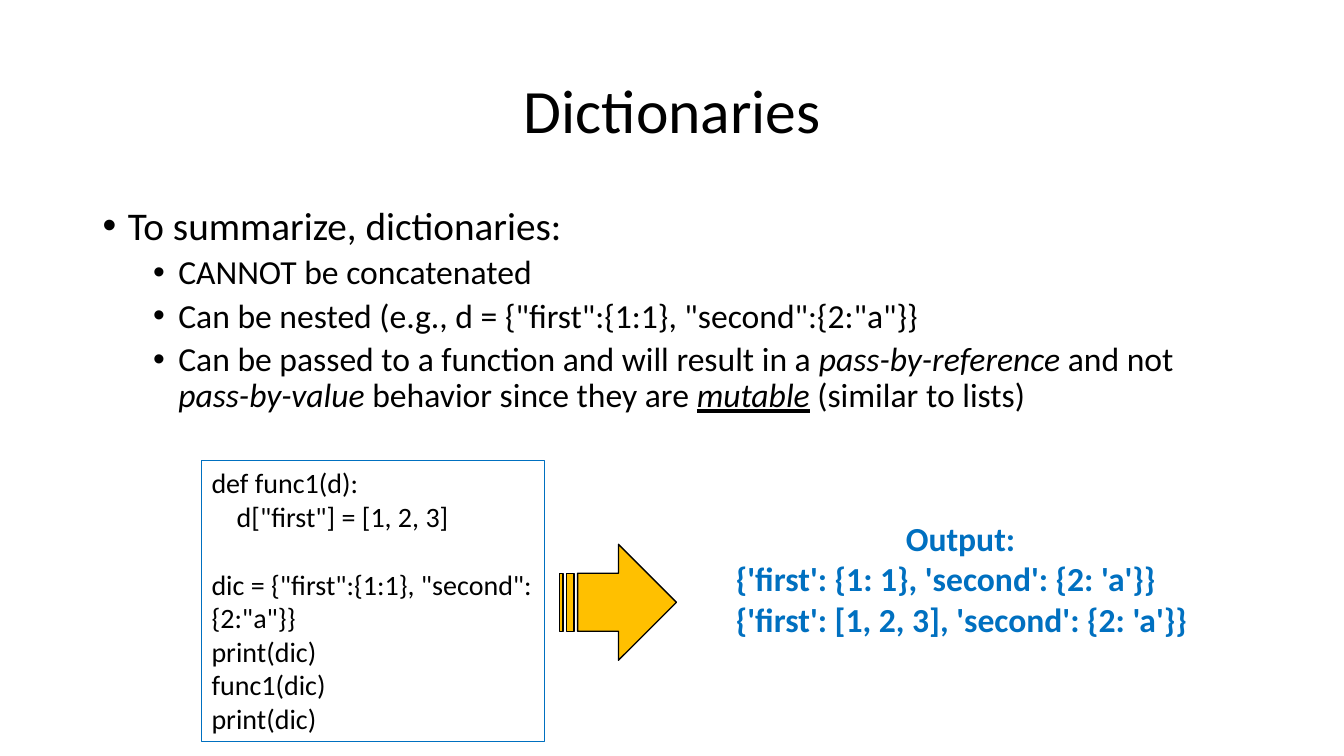
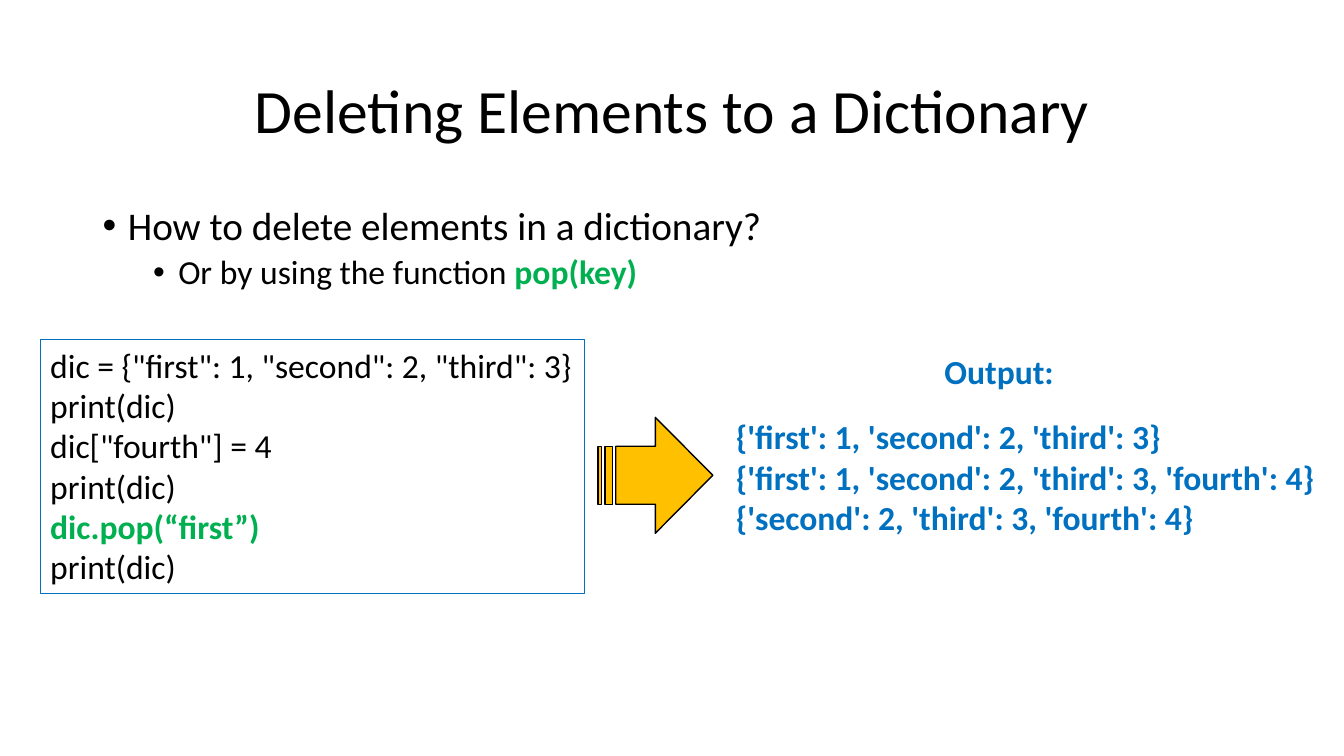
from lxml import etree
from pptx import Presentation
from pptx.dml.color import RGBColor
from pptx.enum.shapes import MSO_SHAPE
from pptx.enum.text import MSO_ANCHOR, MSO_AUTO_SIZE, PP_ALIGN
from pptx.oxml.ns import qn
from pptx.util import Inches, Pt

RECT, ARROW = MSO_SHAPE.RECTANGLE, MSO_SHAPE.STRIPED_RIGHT_ARROW
LEFT, CENTER = PP_ALIGN.LEFT, PP_ALIGN.CENTER
TOP, MIDDLE = MSO_ANCHOR.TOP, MSO_ANCHOR.MIDDLE
GROW = MSO_AUTO_SIZE.SHAPE_TO_FIT_TEXT

FONT = "Calibri"
BLACK = RGBColor(0x00, 0x00, 0x00)
BLUE = RGBColor(0x00, 0x70, 0xC0)
GREEN = RGBColor(0x00, 0xB0, 0x50)
GOLD = RGBColor(0xFF, 0xC0, 0x00)

TITLE_BOX = (0.92, 0.4, 11.5, 1.45)
BODY_BOX = (0.92, 2, 11.5, 4.76)
# Bullet levels: left margin in inches, text size, space before
LEVELS = [(0.25, 28, 10), (0.75, 24, 5)]

# A line is a string, or a list of (text, marks) runs:
# i italic, u underlined, k green bold keyword
SLIDES = [
    {
        "title": "Dictionaries",
        "bullets": [
            (0, "To summarize, dictionaries:"),
            (1, "CANNOT be concatenated"),
            (1, 'Can be nested (e.g., d = {"first":{1:1}, "second":{2:"a"}}'),
            (1, [("Can be passed to a function and will result in a ", ""),
                 ("pass-by-reference", "i"), (" and not ", ""),
                 ("pass-by-value", "i"), (" behavior since they are ", ""),
                 ("mutable", "iu"), (" (similar to lists)", "")]),
        ],
        "code": ["def func1(d):", 'd["first"] = [1, 2, 3]',
                 'dic = {"first":{1:1}, "second":{2:"a"}}',
                 "print(dic)", "func1(dic)", "print(dic)"],
        "code_box": (2, 4.57, 3.4, 2.79),
        "code_size": 20,
        "indented": 1,
        "gap_before": 2,
        "arrow": (5.55, 5.4, 1.16, 1.15),
        "output": [((7.2, 5.09, 4.73, 1.31),
                    ["Output: ", "{'first': {1: 1}, 'second': {2: 'a'}}",
                     "{'first': [1, 2, 3], 'second': {2: 'a'}}"])],
    },
    {
        "title": "Deleting Elements to a Dictionary",
        "bullets": [
            (0, "How to delete elements in a dictionary?"),
            (1, [("Or by using the function ", ""), ("pop(key)", "k")]),
        ],
        "code": ['dic = {"first": 1, "second": 2, "third": 3}', "print(dic)",
                 'dic["fourth"] = 4', "print(dic)",
                 [("dic.pop(“first”)", "k")], "print(dic)"],
        "code_box": (0.4, 3.37, 5.4, 2.52),
        "code_size": 24,
        "arrow": (5.93, 4.14, 1.14, 1.15),
        "output": [((9.26, 3.43, 1.3, 0.5), ["Output:"]),
                   ((7.2, 4.08, 6, 1.31),
                    ["{'first': 1, 'second': 2, 'third': 3}",
                     "{'first': 1, 'second': 2, 'third': 3, 'fourth': 4}",
                     "{'second': 2, 'third': 3, 'fourth': 4}"])],
    },
]


def place(box):
    return [Inches(n) for n in box]


def write(frame, lines, size, color=BLACK, bold=False):
    """Fill a text frame with one left-aligned paragraph per line."""
    for num, line in enumerate(lines):
        para = frame.add_paragraph() if num else frame.paragraphs[0]
        para.alignment = LEFT
        for text, marks in [(line, "")] if isinstance(line, str) else line:
            run = para.add_run()
            run.text = text
            font = run.font
            font.name, font.size = FONT, Pt(size)
            font.bold = bold or "k" in marks
            font.italic = "i" in marks
            font.underline = "u" in marks
            font.color.rgb = GREEN if "k" in marks else color


def add_text(slide, box, lines, size, color=BLACK, bold=False, anchor=TOP):
    frame = slide.shapes.add_textbox(*place(box)).text_frame
    frame.word_wrap = True
    frame.vertical_anchor = anchor
    write(frame, lines, size, color, bold)
    return frame


def indent(para, margin, first=0):
    props = para._p.get_or_add_pPr()
    props.set("marL", str(Inches(margin)))
    props.set("indent", str(Inches(first)))
    return props


def add_title(slide, title):
    para = add_text(slide, TITLE_BOX, [title], 44, anchor=MIDDLE).paragraphs[0]
    para.alignment = CENTER
    para.line_spacing = 0.9


def add_bullets(slide, bullets):
    frame = add_text(slide, BODY_BOX, [line for _, line in bullets], 24)
    for para, (level, _) in zip(frame.paragraphs, bullets):
        margin, size, before = LEVELS[level]
        para.level = level
        para.line_spacing = 0.9
        para.space_before = Pt(before)
        for run in para.runs:
            run.font.size = Pt(size)
        props = indent(para, margin, -0.25)
        etree.SubElement(props, qn("a:buFont")).set("typeface", "Arial")
        etree.SubElement(props, qn("a:buChar")).set("char", "•")


def add_shape(slide, kind, box, line, width):
    shape = slide.shapes.add_shape(kind, *place(box))
    shape.shadow.inherit = False
    shape.fill.background()
    shape.line.color.rgb = line
    shape.line.width = Pt(width)
    return shape


def add_code(slide, data):
    frame = add_shape(slide, RECT, data["code_box"], BLUE, 0.75).text_frame
    frame.word_wrap = True
    frame.auto_size = GROW
    frame.vertical_anchor = TOP
    write(frame, data["code"], data["code_size"])
    if "indented" in data:
        indent(frame.paragraphs[data["indented"]], 0.25)
    if "gap_before" in data:
        frame.paragraphs[data["gap_before"]].space_before = Pt(24.4)


def add_arrow(slide, box):
    arrow = add_shape(slide, ARROW, box, BLACK, 1)
    arrow.fill.solid()
    arrow.fill.fore_color.rgb = GOLD


def add_output(slide, box, lines):
    frame = add_text(slide, box, lines, 24, BLUE, True)
    frame.word_wrap = False
    frame.auto_size = GROW
    if lines[0].startswith("Output"):
        frame.paragraphs[0].alignment = CENTER


def main():
    deck = Presentation()
    deck.slide_width, deck.slide_height = Inches(13.33), Inches(7.5)
    for data in SLIDES:
        slide = deck.slides.add_slide(deck.slide_layouts[6])
        add_title(slide, data["title"])
        add_bullets(slide, data["bullets"])
        add_code(slide, data)
        add_arrow(slide, data["arrow"])
        for box, lines in data["output"]:
            add_output(slide, box, lines)
    deck.save("out.pptx")


if __name__ == "__main__":
    main()
